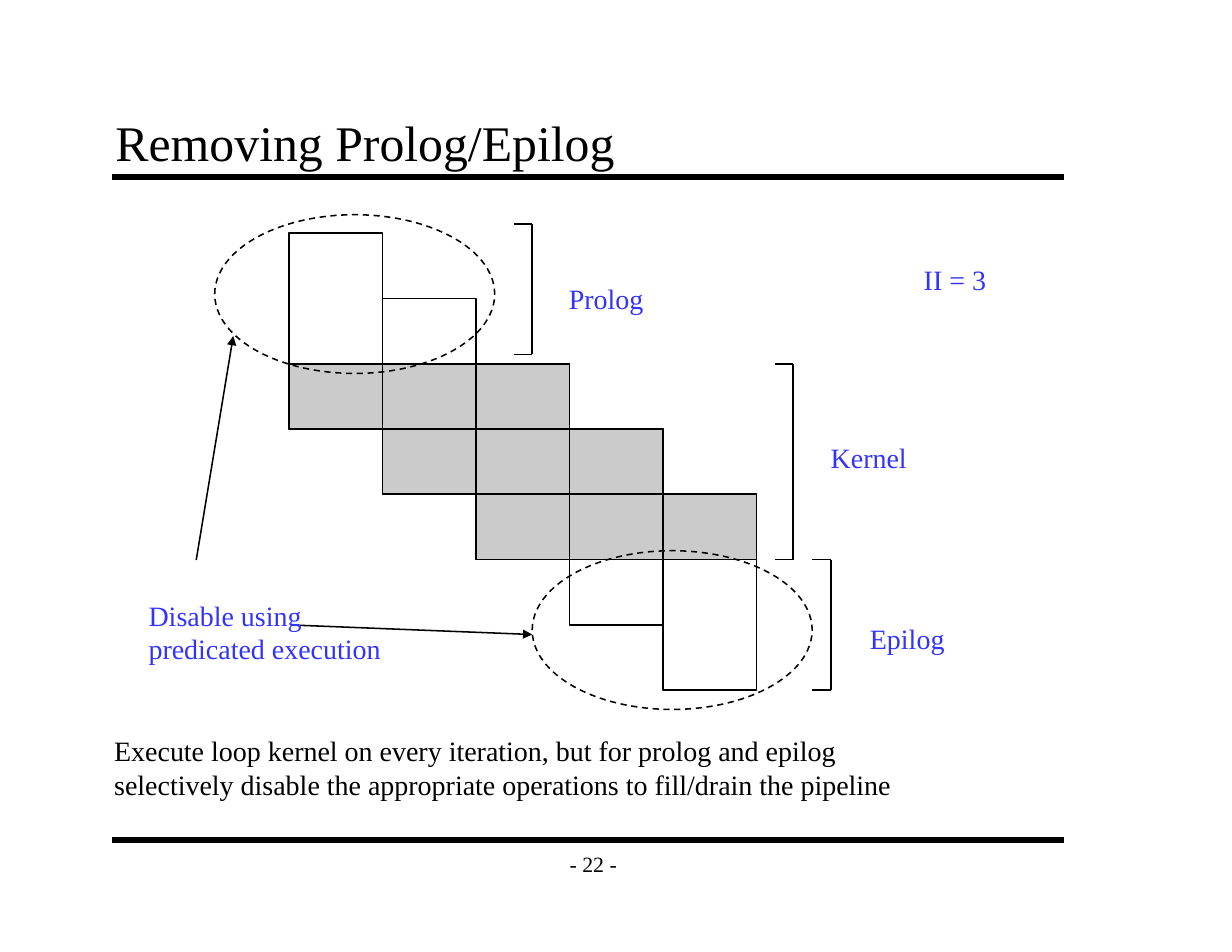
from lxml import etree
from pptx import Presentation
from pptx.dml.color import RGBColor
from pptx.enum.dml import MSO_LINE
from pptx.enum.shapes import MSO_CONNECTOR, MSO_SHAPE
from pptx.enum.text import MSO_ANCHOR as Anchor, PP_ALIGN as Align
from pptx.oxml.ns import qn
from pptx.util import Cm, Pt

COLORS = {"ink": "000000", "label": "3333FF", "kernel": "CBCBCB"}
FONT = "Times New Roman"


def add_line(x1, y1, x2, y2, weight=1, arrow=False):
    line = page.shapes.add_connector(
        MSO_CONNECTOR.STRAIGHT, Cm(x1), Cm(y1), Cm(x2), Cm(y2))
    line.line.color.rgb = RGBColor.from_string(COLORS["ink"])
    line.line.width = Pt(weight)
    properties = line._element.spPr
    if arrow:
        etree.SubElement(properties.find(qn("a:ln")), qn("a:tailEnd"), type="triangle")
    etree.SubElement(properties, qn("a:effectLst"))


def add_text(lines, left, top, width, height, color="label", size=18,
             anchor=Anchor.TOP, align=Align.LEFT):
    box = page.shapes.add_textbox(Cm(left), Cm(top), Cm(width), Cm(height))
    frame = box.text_frame
    frame.word_wrap = False
    frame.vertical_anchor = anchor
    for index, words in enumerate(lines):
        para = frame.paragraphs[0] if index == 0 else frame.add_paragraph()
        para.alignment = align
        span = para.add_run()
        span.text = words
        span.font.name = FONT
        span.font.size = Pt(size)
        span.font.color.rgb = RGBColor.from_string(COLORS[color])
    return frame


deck = Presentation()
deck.slide_width, deck.slide_height = Cm(27.94), Cm(21.59)
page = deck.slides.add_slide(deck.slide_layouts[6])

for rule_top in (4.01, 19.05):
    add_line(2.54, rule_top, 24.13, rule_top, weight=4)

title = add_text(["Removing Prolog/Epilog"], 2.34, 2.34, 23.06, 1.7,
                 "ink", 32, Anchor.BOTTOM)
number = add_text(["- 22 -"], 12.5, 19.05, 1.91, 1.07,
                  "ink", 14, Anchor.MIDDLE, Align.CENTER)
for frame in (title, number):
    frame.margin_left = frame.margin_right = Cm(0.28)
    frame.margin_top = frame.margin_bottom = Cm(0.15)

stages = 3
iterations = 5
column, row = 2.12, 1.48
left, top = 6.56, 5.29
kernel_top = top + (stages - 1) * row
kernel_bottom = kernel_top + stages * row
pipeline_bottom = top + (iterations + stages - 1) * row

outlines = []
for step in reversed(range(stages)):
    outlines.append((MSO_SHAPE.RECTANGLE, left + step * column,
                     kernel_top + step * row, stages * column, row, "kernel"))
for step in range(iterations):
    outlines.append((MSO_SHAPE.RECTANGLE, left + step * column,
                     top + step * row, column, stages * row, None))
for oval_left, oval_top in ((4.87, 4.87), (12.07, 12.49)):
    outlines.append((MSO_SHAPE.OVAL, oval_left, oval_top, 6.35, 3.6, None))

for kind, x, y, width, height, fill in outlines:
    shape = page.shapes.add_shape(kind, Cm(x), Cm(y), Cm(width), Cm(height))
    shape.shadow.inherit = False
    shape.line.color.rgb = RGBColor.from_string(COLORS["ink"])
    shape.line.width = Pt(1)
    if fill:
        shape.fill.solid()
        shape.fill.fore_color.rgb = RGBColor.from_string(COLORS[fill])
    else:
        shape.fill.background()
    if kind == MSO_SHAPE.OVAL:
        shape.line.dash_style = MSO_LINE.DASH

tick = 0.42
for x, start, end in ((12.07, 5.08, 8.04),
                      (17.99, kernel_top, kernel_bottom),
                      (18.84, kernel_bottom, pipeline_bottom)):
    add_line(x, start, x, end)
    for y in (start, end):
        add_line(x - tick, y, x, y)

add_line(4.45, 12.7, 5.29, 7.62, arrow=True)
add_line(6.77, 14.18, 12.07, 14.39, arrow=True)

for words, x, y, width in (("Prolog", 12.65, 6.25, 2.21),
                           ("Kernel", 18.59, 9.86, 2.24),
                           ("Epilog", 19.48, 13.97, 2.21),
                           ("II = 3", 20.7, 5.82, 1.93)):
    add_text([words], x, y, width, 1.02)

add_text(["Disable using", "predicated execution"], 3.12, 13.44, 5.79, 1.78)
add_text(["Execute loop kernel on every iteration, but for prolog and epilog",
          "selectively disable the appropriate operations to fill/drain the pipeline"],
         2.34, 16.51, 18.16, 1.78, "ink")

deck.save("out.pptx")
